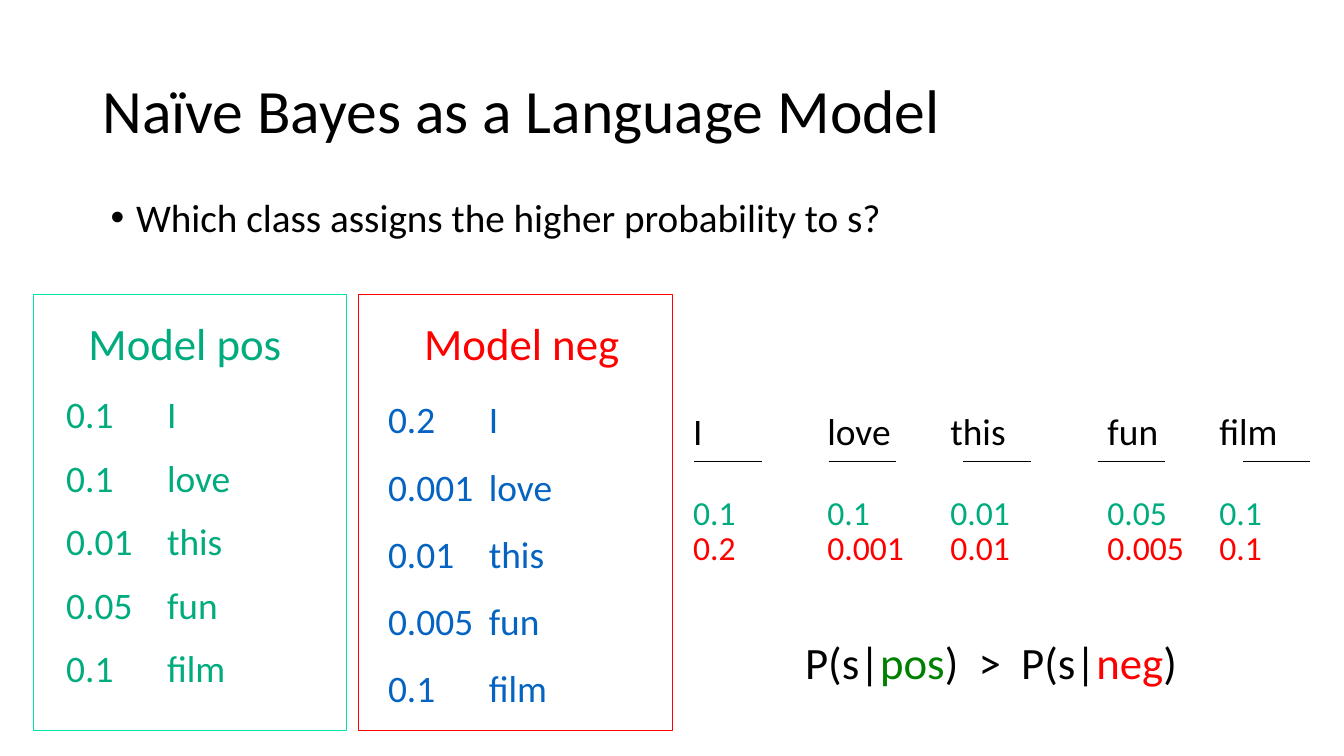
from dataclasses import dataclass

from lxml import etree
from pptx import Presentation
from pptx.dml.color import RGBColor
from pptx.enum.shapes import MSO_CONNECTOR, MSO_SHAPE
from pptx.enum.text import MSO_ANCHOR
from pptx.oxml.ns import qn
from pptx.util import Cm, Pt

RECT = MSO_SHAPE.RECTANGLE
STRAIGHT = MSO_CONNECTOR.STRAIGHT
MIDDLE = MSO_ANCHOR.MIDDLE


@dataclass(frozen=True)
class Theme:
    font: str = "Calibri"
    black: str = "000000"
    pos: str = "00AB7E"
    neg: str = "FF0000"
    frame: str = "00E4A8"
    blue: str = "0563C1"
    green: str = "008000"
    title: float = 44
    head: float = 32
    body: float = 28
    word: float = 26.7
    value: float = 24
    line: float = 0.75


THEME = Theme()
WORDS = ("I", "love", "this", "fun", "film")
POS = ("0.1", "0.1", "0.01", "0.05", "0.1")
NEG = ("0.2", "0.001", "0.01", "0.005", "0.1")
LEFTS = (17.22, 20.6, 23.7, 27.66, 30.48)
RULES = (17.5, 20.88, 24.28, 27.66, 31.32)


def style(run, size, color):
    run.font.name = THEME.font
    run.font.size = Pt(size)
    run.font.color.rgb = RGBColor.from_string(color)


def add_text(shapes, box, lines, size, color, spacing=None, gap=0, wrap=True):
    shape = shapes.add_textbox(*map(Cm, box))
    frame = shape.text_frame
    frame.text = "\n".join(lines)
    frame.word_wrap = wrap
    for index, para in enumerate(frame.paragraphs):
        if spacing:
            para.line_spacing = spacing
        if index:
            para.space_before = Pt(gap)
        for run in para.runs:
            style(run, size, color)
    return frame


def add_bullet(para):
    props = para._p.get_or_add_pPr()
    props.set("marL", str(Cm(0.64)))
    props.set("indent", str(-Cm(0.64)))
    etree.SubElement(props, qn("a:buFont")).set("typeface", "Arial")
    etree.SubElement(props, qn("a:buChar")).set("char", "•")


def add_tab(para):
    tabs = etree.SubElement(para._p.get_or_add_pPr(), qn("a:tabLst"))
    tab = etree.SubElement(tabs, qn("a:tab"))
    tab.set("pos", str(Cm(2.54)))
    tab.set("algn", "l")


def add_table_text(shapes, box, values, color, **layout):
    rows = [f"{value}\t{word}" for value, word in zip(values, WORDS)]
    frame = add_text(shapes, box, rows, THEME.word, color, **layout)
    for para in frame.paragraphs:
        add_tab(para)


def add_frame(shapes, left, color):
    frame = shapes.add_shape(RECT, Cm(left), Cm(7.41), Cm(7.9), Cm(11))
    frame.shadow.inherit = False
    frame.fill.background()
    frame.line.color.rgb = RGBColor.from_string(color)
    frame.line.width = Pt(THEME.line)


def add_rule(shapes, left, top, width):
    rule = shapes.add_connector(
        STRAIGHT, Cm(left), Cm(top), Cm(left + width), Cm(top))
    rule.line.color.rgb = RGBColor.from_string(THEME.black)
    rule.line.width = Pt(THEME.line)
    etree.SubElement(rule._element.spPr, qn("a:effectLst"))


def add_row(shapes, top, height, labels, widths, size, color):
    for left, width, label in zip(LEFTS, widths, labels):
        add_text(shapes, (left, top, width, height), [label], size, color)


def add_models(shapes):
    add_table_text(shapes, (1.42, 9.73, 9.04, 8.23), POS, THEME.pos, gap=13.4)
    for left, name, color in ((1.98, "pos", THEME.pos),
                              (10.44, "neg", THEME.neg)):
        add_text(shapes, (left, 7.82, 5.92, 1.63), [f"Model {name}"],
                 THEME.head, color)
    add_frame(shapes, 0.84, THEME.frame)
    add_frame(shapes, 9.04, THEME.neg)
    add_table_text(shapes, (9.53, 9.3, 4.67, 8.81), NEG, THEME.blue,
                   spacing=1.5, wrap=False)


def add_sentence(shapes):
    words = shapes.add_group_shape().shapes
    add_row(words, 10.16, 1.4, WORDS, (3.66, 3.66, 3.66, 2.82, 3.38),
            THEME.word, THEME.black)
    for left in RULES:
        add_rule(words, left, 11.63, 1.7)
    values = shapes.add_group_shape().shapes
    for top, labels, color in ((12.27, POS, THEME.pos),
                               (13.16, NEG, THEME.neg)):
        add_row(values, top, 1.3, labels, (2.82, 3.1, 3.38, 3.38, 3.38),
                THEME.value, color)


def add_result(shapes):
    frame = add_text(shapes, (20.04, 15.88, 10.72, 1.63), ["P(s|"],
                     THEME.head, THEME.black)
    para = frame.paragraphs[0]
    for text, color in (("pos", THEME.green), (")  >  P(s|", THEME.black),
                        ("neg", THEME.neg), (")", THEME.black)):
        run = para.add_run()
        run.text = text
        style(run, THEME.head, color)


def main():
    deck = Presentation()
    deck.slide_width = Cm(33.87)
    deck.slide_height = Cm(19.05)
    shapes = deck.slides.add_slide(deck.slide_layouts[6]).shapes
    title = add_text(shapes, (2.33, 1.01, 29.21, 3.68),
                     ["Naïve Bayes as a Language Model"],
                     THEME.title, THEME.black, spacing=0.9)
    title.vertical_anchor = MIDDLE
    query = add_text(shapes, (2.54, 4.88, 28.78, 3.02),
                     ["Which class assigns the higher probability to s?"],
                     THEME.body, THEME.black, spacing=0.9)
    add_bullet(query.paragraphs[0])
    add_models(shapes)
    add_sentence(shapes)
    add_result(shapes)
    deck.save("out.pptx")


if __name__ == "__main__":
    main()
